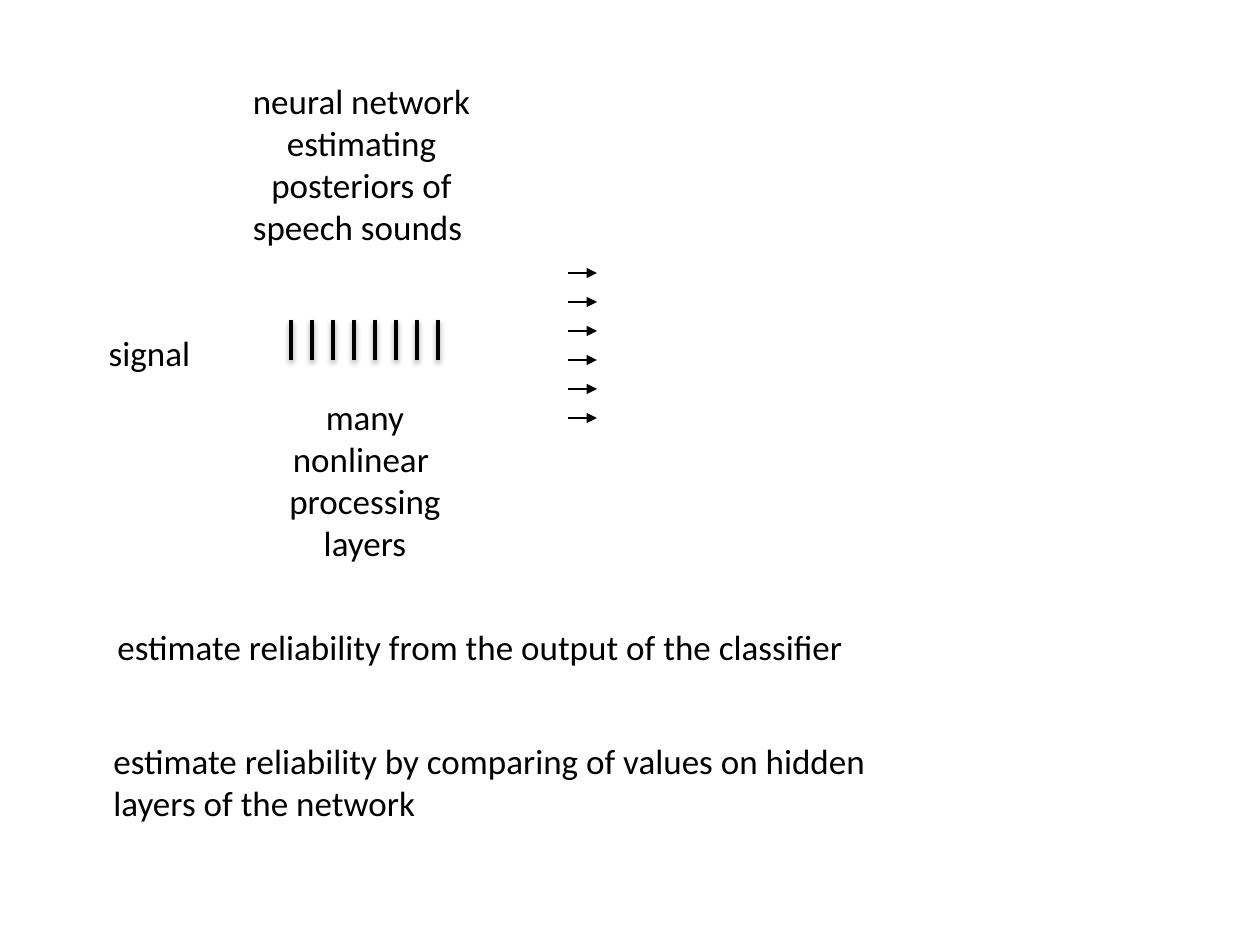
import pptx
import pptx.util
import pptx.dml.color
import pptx.enum.shapes
import pptx.enum.text
import pptx.oxml
import pptx.oxml.ns

SCALE = 914400 / 126
BLACK = "000000"
LEFT = pptx.enum.text.PP_ALIGN.LEFT
CENTER = pptx.enum.text.PP_ALIGN.CENTER
NAMESPACE = pptx.oxml.ns.nsdecls("a")
SHADOW = (
    f'<a:effectLst {NAMESPACE}><a:outerShdw blurRad="40000" dist="20000" dir="5400000" '
    f'rotWithShape="0"><a:srgbClr val="{BLACK}"><a:alpha val="38000"/></a:srgbClr>'
    "</a:outerShdw></a:effectLst>"
)
NO_SHADOW = f"<a:effectLst {NAMESPACE}/>"
ARROWHEAD = f'<a:tailEnd {NAMESPACE} type="triangle"/>'


def color(value):
    return pptx.dml.color.RGBColor.from_string(value)


def add_line(start_x, start_y, end_x, end_y, width, effect):
    points = [round(value * SCALE) for value in (start_x, start_y, end_x, end_y)]
    connector = slide.shapes.add_connector(pptx.enum.shapes.MSO_CONNECTOR.STRAIGHT, *points)
    connector.line.color.rgb = color(BLACK)
    connector.line.width = pptx.util.Pt(width)
    connector._element.spPr.append(pptx.oxml.parse_xml(effect))
    return connector


presentation = pptx.Presentation()
presentation.slide_width = round(1260 * SCALE)
presentation.slide_height = round(945 * SCALE)
slide = presentation.slides.add_slide(presentation.slide_layouts[6])

labels = [
    ("estimate reliability from the output of the classifier", 105, 619, 878, 55, LEFT, True),
    ("neural network\nestimating\nposteriors of\nspeech sounds ", 238, 73, 247, 183, CENTER, False),
    ("signal", 96, 325, 107, 55, CENTER, False),
    ("many nonlinear \nprocessing\nlayers", 246, 389, 238, 183, CENTER, True),
    ("estimate reliability by comparing of values on hidden layers of the network",
     101, 733, 858, 97, LEFT, True),
]
for text, left, top, width, height, alignment, wrap in labels:
    box = [round(value * SCALE) for value in (left, top, width, height)]
    text_frame = slide.shapes.add_textbox(*box).text_frame
    text_frame.word_wrap = wrap
    text_frame.auto_size = pptx.enum.text.MSO_AUTO_SIZE.SHAPE_TO_FIT_TEXT
    text_frame.text = text
    for paragraph in text_frame.paragraphs:
        paragraph.alignment = alignment
        for run in paragraph.runs:
            run.font.name = "Calibri"
            run.font.size = pptx.util.Pt(20)
            run.font.color.rgb = color(BLACK)

for index in range(6):
    y = 273 + 29 * index
    arrow = add_line(568, y, 597, y, 0.75, NO_SHADOW)
    arrow.line._get_or_add_ln().append(pptx.oxml.parse_xml(ARROWHEAD))

for index in range(8):
    x = 291 + 21 * index
    add_line(x, 320, x, 360, 2, SHADOW)

presentation.save("out.pptx")
